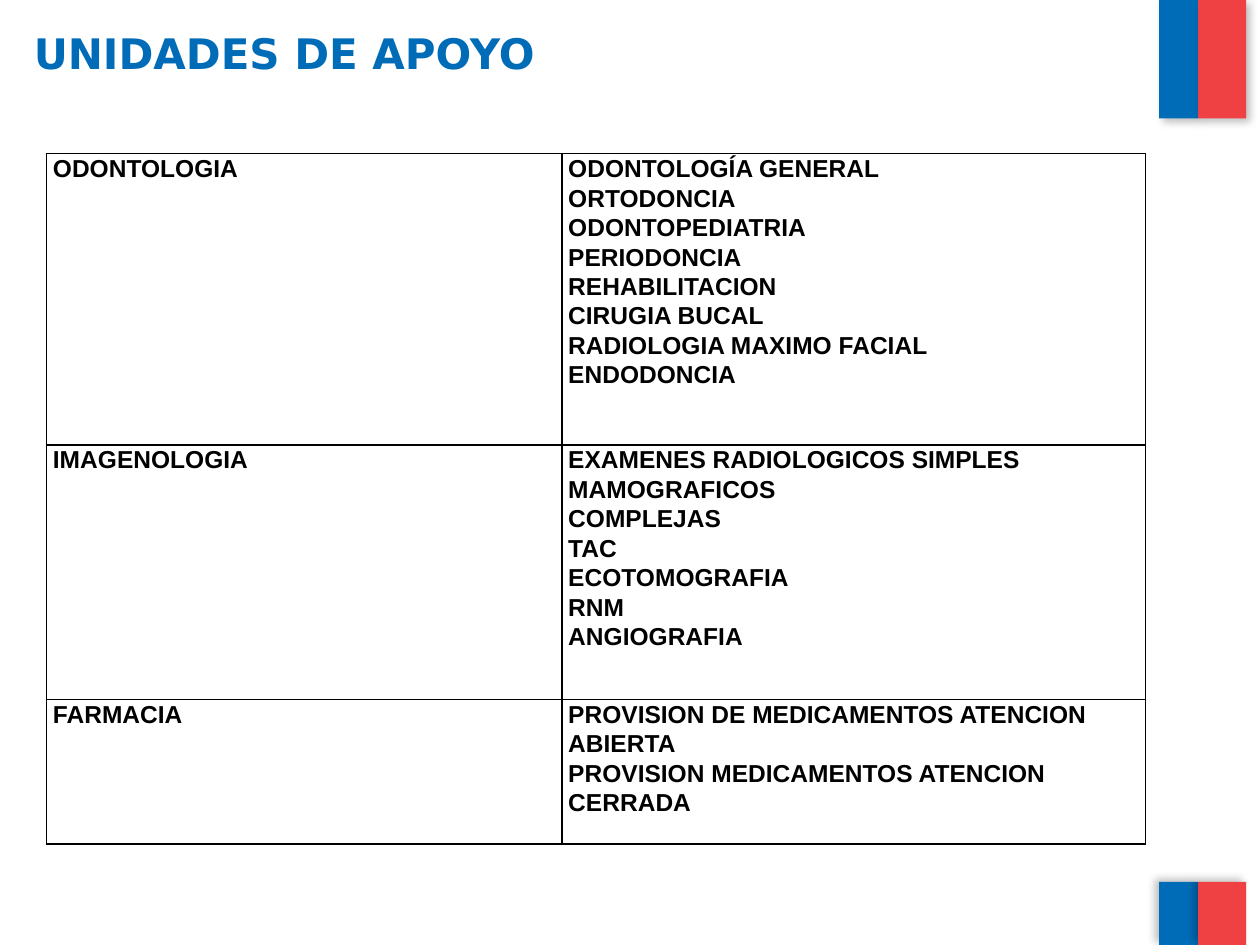
from lxml import etree
from pptx import Presentation
from pptx.dml.color import RGBColor
from pptx.enum.shapes import MSO_SHAPE
from pptx.enum.text import MSO_ANCHOR
from pptx.oxml.ns import qn
from pptx.util import Inches, Pt

RECT = MSO_SHAPE.RECTANGLE
TOP = MSO_ANCHOR.TOP
BLUE, RED, BLACK = "006CB7", "EF4144", "000000"

UNITS = [
    ("ODONTOLOGIA", [
        "ODONTOLOGÍA GENERAL", "ORTODONCIA", "ODONTOPEDIATRIA", "PERIODONCIA",
        "REHABILITACION", "CIRUGIA BUCAL", "RADIOLOGIA MAXIMO FACIAL", "ENDODONCIA"]),
    ("IMAGENOLOGIA", [
        "EXAMENES RADIOLOGICOS SIMPLES", "MAMOGRAFICOS", "COMPLEJAS", "TAC",
        "ECOTOMOGRAFIA", "RNM", "ANGIOGRAFIA"]),
    ("FARMACIA", [
        "PROVISION DE MEDICAMENTOS ATENCION ABIERTA",
        "PROVISION MEDICAMENTOS ATENCION CERRADA"]),
]


def color(code):
    return RGBColor.from_string(code)


def node(parent, tag, **attrs):
    return etree.SubElement(parent, qn(tag), {k: str(v) for k, v in attrs.items()})


class Deck:
    def __init__(self, slide):
        self.slide = slide
        self.head = ("DejaVu Sans", 24, BLUE)
        self.body = ("Arial", 14, BLACK)

    def style(self, para, look):
        name, size, tint = look
        for run in para.runs:
            run.font.name = name
            run.font.size = Pt(size)
            run.font.bold = True
            run.font.color.rgb = color(tint)

    def title(self, text, *box):
        frame = self.slide.shapes.add_textbox(*map(Inches, box)).text_frame
        frame.word_wrap = True
        frame.vertical_anchor = TOP
        frame.text = text
        self.style(frame.paragraphs[0], self.head)

    def band(self, tint, angle, *box):
        shape = self.slide.shapes.add_shape(RECT, *map(Inches, box))
        shape.fill.solid()
        shape.fill.fore_color.rgb = color(tint)
        shape.line.fill.background()
        shape.shadow.inherit = False
        effects = shape._element.spPr.find(qn("a:effectLst"))
        shadow = node(effects, "a:outerShdw", blurRad=Pt(5), dist=Pt(3),
                      dir=angle * 60000, algn="tl", rotWithShape=0)
        tone = node(shadow, "a:srgbClr", val=BLACK)
        node(tone, "a:alpha", val=25000)

    def cell(self, cell, lines):
        cell.margin_left = cell.margin_right = Inches(0.05)
        cell.margin_top = cell.margin_bottom = 0
        cell.vertical_anchor = TOP
        cell.text_frame.text = "\n".join(lines)
        for para in cell.text_frame.paragraphs:
            para.line_spacing = 1.07
            self.style(para, self.body)
        props = cell._tc.get_or_add_tcPr()
        for side in ("a:lnL", "a:lnR", "a:lnT", "a:lnB"):
            edge = node(props, side, w=Pt(1))
            node(node(edge, "a:solidFill"), "a:srgbClr", val=BLACK)
        cell.fill.background()

    def table(self, rows, left, top, widths, heights):
        box = (left, top, sum(widths), sum(heights))
        table = self.slide.shapes.add_table(
            len(heights), len(widths), *map(Inches, box)).table
        table.first_row = table.horz_banding = False
        for col, width in zip(table.columns, widths):
            col.width = Inches(width)
        for row, height, (unit, items) in zip(table.rows, heights, rows):
            row.height = Inches(height)
            for cell, lines in zip(row.cells, ([unit], items)):
                self.cell(cell, lines)


def main():
    prs = Presentation()
    prs.slide_width, prs.slide_height = Inches(10), Inches(7.5)
    deck = Deck(prs.slides.add_slide(prs.slide_layouts[6]))
    for top, height, angle in ((0, 0.94, 45), (7, 0.5, 215)):
        deck.band(BLUE, angle, 9.2, top, 0.31, height)
        deck.band(RED, angle, 9.51, top, 0.38, height)
    deck.title("UNIDADES DE APOYO", 0.17, 0.17, 8.93, 1.25)
    deck.table(UNITS, 0.37, 1.22, (4.09, 4.63), (2.31, 2.02, 1.15))
    prs.save("out.pptx")


if __name__ == "__main__":
    main()
